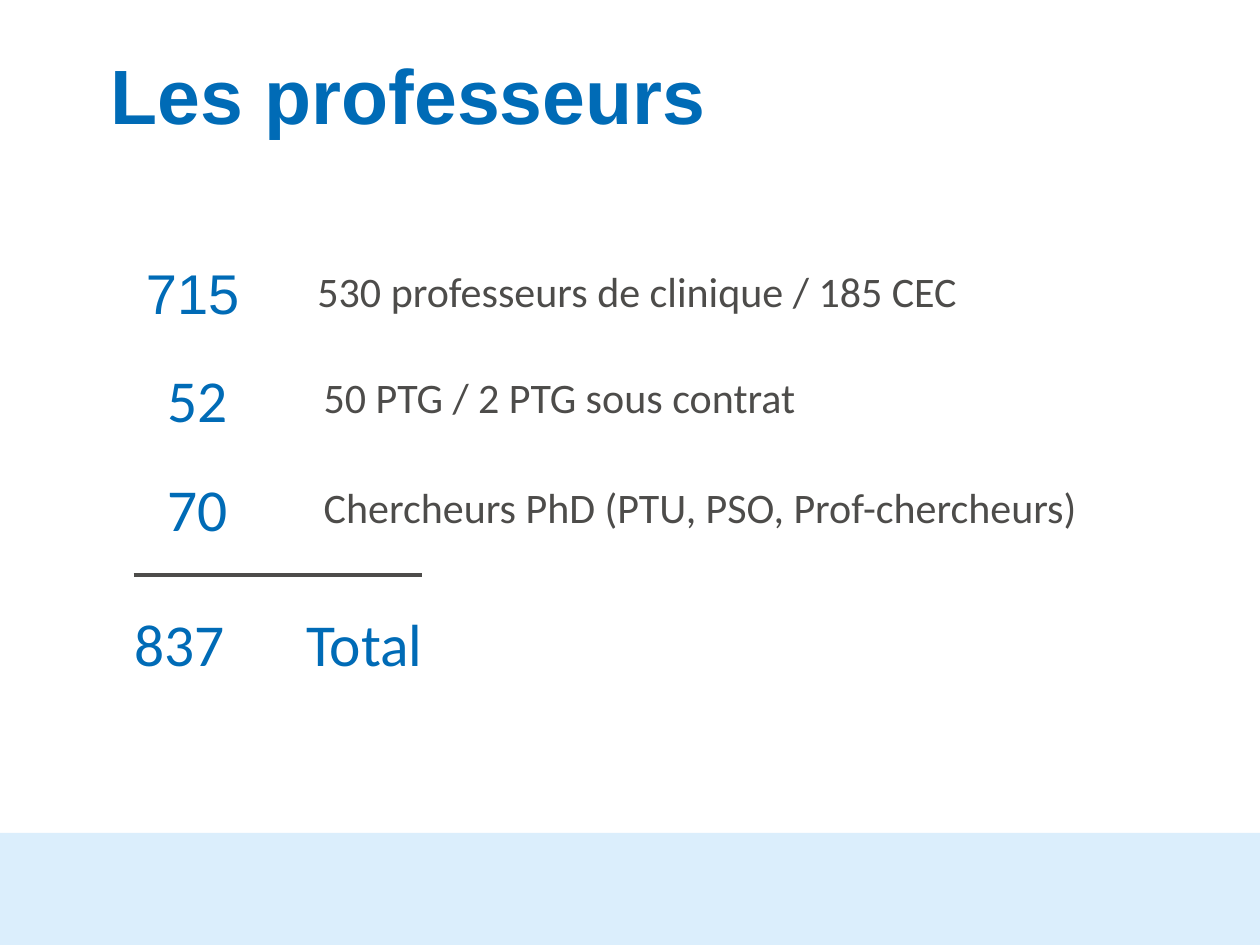
from lxml import etree
from pptx import Presentation
from pptx.dml.color import RGBColor
from pptx.enum.shapes import MSO_CONNECTOR, MSO_SHAPE
from pptx.enum.text import MSO_ANCHOR, MSO_AUTO_SIZE, PP_ALIGN
from pptx.oxml.ns import qn
from pptx.util import Inches, Pt

BLUE = RGBColor(0x00, 0x6B, 0xB6)
GRAY = RGBColor(0x4D, 0x4C, 0x4A)
PALE_BLUE = RGBColor(0xDB, 0xEE, 0xFC)
STRAIGHT = MSO_CONNECTOR.STRAIGHT
RECTANGLE = MSO_SHAPE.RECTANGLE
BOTTOM = MSO_ANCHOR.BOTTOM
GROW = MSO_AUTO_SIZE.SHAPE_TO_FIT_TEXT
NO_FIT = MSO_AUTO_SIZE.NONE
LEFT = PP_ALIGN.LEFT

TITLE = {"name": "Arial", "size": Pt(44), "bold": True}
CLINIC_COUNT = {"name": "Arial", "size": Pt(32)}
COUNT = {"name": "Calibri", "size": Pt(34)}
DETAIL = {"name": "Calibri", "size": Pt(24)}


def place(shape, left, top, width, height):
    shape.left, shape.top = Inches(left), Inches(top)
    shape.width, shape.height = Inches(width), Inches(height)


def write(paragraph, text, values, color):
    run = paragraph.add_run()
    run.text = text
    for name, value in values.items():
        setattr(run.font, name, value)
    run.font.color.rgb = color
    return run


def add_band(slide):
    band = slide.shapes.add_shape(
        RECTANGLE, Inches(0), Inches(6.61), Inches(10), Inches(0.89))
    band.shadow.inherit = False
    band.fill.solid()
    band.fill.fore_color.rgb = PALE_BLUE
    band.line.fill.background()


def add_title(slide, text):
    title = slide.shapes.title
    place(title, 0.78, -0.3, 8.45, 1.47)
    frame = title.text_frame
    frame.vertical_anchor = BOTTOM
    frame.auto_size = NO_FIT
    paragraph = frame.paragraphs[0]
    paragraph.alignment = LEFT
    paragraph.line_spacing = 0.9
    write(paragraph, text, TITLE, BLUE)


def add_text(slide, box, text, values, color, inset=0, tab=None, spacing=None):
    shape = slide.shapes.add_textbox(*map(Inches, box))
    frame = shape.text_frame
    frame.word_wrap = True
    frame.auto_size = GROW
    if inset == 0:
        for side in ("left", "top", "right", "bottom"):
            setattr(frame, f"margin_{side}", 0)
    paragraph = frame.paragraphs[0]
    properties = paragraph._p.get_or_add_pPr()
    if inset == 0:
        properties.set("marL", str(Inches(0.01)))
    if tab:
        tabs = etree.SubElement(properties, qn("a:tabLst"))
        etree.SubElement(tabs, qn("a:tab"), pos=str(Inches(tab)), algn="l")
    run = write(paragraph, text, values, color)
    if spacing:
        run._r.get_or_add_rPr().set("spc", str(spacing))


def add_rule(slide, left, right, top):
    rule = slide.shapes.add_connector(
        STRAIGHT, Inches(left), Inches(top), Inches(right), Inches(top))
    rule.line.color.rgb = GRAY
    rule.line.width = Pt(2.25)
    etree.SubElement(rule._element.spPr, qn("a:effectLst"))


def main():
    presentation = Presentation()
    presentation.slide_width = Inches(10)
    presentation.slide_height = Inches(7.5)
    slide = presentation.slides.add_slide(presentation.slide_layouts[5])

    add_band(slide)
    add_title(slide, "Les professeurs")
    add_text(slide, (1.06, 2, 1.02, 0.64), "715", CLINIC_COUNT, BLUE, inset=0.1)
    add_text(slide, (2.51, 2.11, 6.98, 0.78),
             "530 professeurs de clinique / 185 CEC", DETAIL, GRAY)
    rows = [
        ("52", "50 PTG / 2 PTG sous contrat"),
        ("70", "Chercheurs PhD (PTU, PSO, Prof-chercheurs)"),
    ]
    for index, (count, detail) in enumerate(rows):
        top = 2.88 + 0.87 * index
        add_text(slide, (1.32, top, 0.51, 0.57), count, COUNT, BLUE, spacing=-30)
        add_text(slide, (2.56, top + 0.07, 6.03, 0.4), detail, DETAIL, GRAY)
    add_rule(slide, 1.06, 3.35, 4.56)
    add_text(slide, (1.06, 4.82, 2.6, 0.57), "837\tTotal", COUNT, BLUE, tab=1.36)

    presentation.save("out.pptx")


if __name__ == "__main__":
    main()
